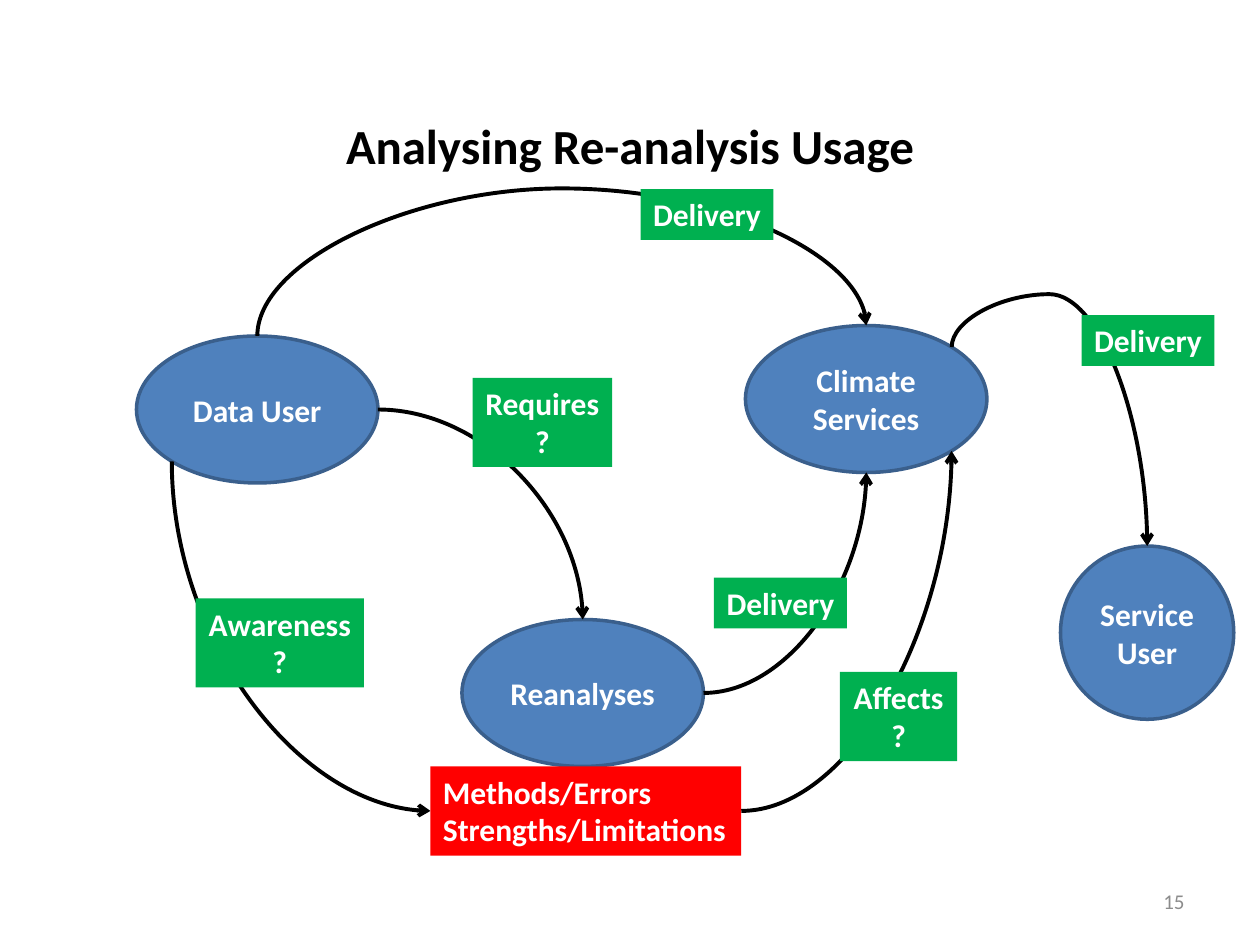
from typing import NamedTuple, Optional

from lxml import etree
from pptx import Presentation
from pptx.dml.color import RGBColor
from pptx.enum.shapes import MSO_CONNECTOR, MSO_SHAPE
from pptx.enum.text import MSO_ANCHOR, PP_ALIGN
from pptx.oxml.ns import qn
from pptx.util import Pt

CURVE = MSO_CONNECTOR.CURVE
OVAL, RECT = MSO_SHAPE.OVAL, MSO_SHAPE.RECTANGLE
MIDDLE, TOP = MSO_ANCHOR.MIDDLE, MSO_ANCHOR.TOP
LEFT, CENTER, RIGHT = PP_ALIGN.LEFT, PP_ALIGN.CENTER, PP_ALIGN.RIGHT

COLORS = {
    "blue": "4F81BD",
    "edge": "3A5F8C",
    "green": "00B050",
    "red": "FF0000",
    "black": "000000",
    "white": "FFFFFF",
    "gray": "8C8C8C",
}


class Node(NamedTuple):
    text: str
    x: float
    y: float
    w: float = 138
    h: float = 84


class Label(NamedTuple):
    text: str
    x: float
    y: float
    w: float = 76
    h: float = 29.1
    fill: str = "green"
    align: PP_ALIGN = CENTER


class Arrow(NamedTuple):
    x1: float
    y1: float
    x2: float
    y2: float
    upright: bool = False
    peak: Optional[float] = None


NODES = [
    Node("Reanalyses", 264, 354),
    Node("Climate Services", 426, 186),
    Node("Data User", 78, 192),
    Node("Service\nUser", 606, 312, 99, 99),
]

ARROWS = [
    Arrow(147, 192, 495, 186, upright=True, peak=107.8),
    Arrow(216, 234, 333, 354),
    Arrow(98.2, 263.7, 246, 463.4, upright=True),
    Arrow(402, 396, 495, 270),
    Arrow(543.8, 198.3, 655.5, 312, upright=True, peak=168),
    Arrow(423.6, 463.4, 543.8, 257.7),
]

LABELS = [
    Label("Methods/Errors\nStrengths/Limitations", 246, 438, 177.6, 50.9, "red", LEFT),
    Label("Requires\n?", 270, 216, 79.8, 50.9),
    Label("Awareness\n?", 111.8, 342, 96.2, 50.9),
    Label("Delivery", 366, 108),
    Label("Delivery", 618, 180),
    Label("Delivery", 408, 330),
    Label("Affects\n?", 480, 384, 67, 50.9),
]


def shade(name: str) -> RGBColor:
    return RGBColor.from_string(COLORS[name])


def put_text(shape, text: str, *, size=18, color="white", bold=True,
             align=CENTER, anchor=MIDDLE, wrap=True) -> None:
    frame = shape.text_frame
    frame.word_wrap = wrap
    frame.vertical_anchor = anchor
    frame.text = text
    for para in frame.paragraphs:
        para.alignment = align
        for run in para.runs:
            run.font.name = "Calibri"
            run.font.size = Pt(size)
            run.font.bold = bold
            run.font.color.rgb = shade(color)


def draw_box(slide, kind: MSO_SHAPE, item, fill: str):
    shape = slide.shapes.add_shape(kind, Pt(item.x), Pt(item.y), Pt(item.w), Pt(item.h))
    shape.shadow.inherit = False
    shape.fill.solid()
    shape.fill.fore_color.rgb = shade(fill)
    return shape


def draw_node(slide, node: Node) -> None:
    shape = draw_box(slide, OVAL, node, "blue")
    shape.line.color.rgb = shade("edge")
    shape.line.width = Pt(2)
    put_text(shape, node.text)


def draw_label(slide, label: Label) -> None:
    shape = draw_box(slide, RECT, label, label.fill)
    shape.line.fill.background()
    put_text(shape, label.text, align=label.align, anchor=TOP, wrap=False)


def draw_arrow(slide, arrow: Arrow) -> None:
    line = slide.shapes.add_connector(
        CURVE, Pt(arrow.x1), Pt(arrow.y1), Pt(arrow.x2), Pt(arrow.y2))
    line.line.color.rgb = shade("black")
    line.line.width = Pt(2.25)
    props = line._element.spPr
    tail = etree.SubElement(props.find(qn("a:ln")), qn("a:tailEnd"))
    tail.set("type", "arrow")
    etree.SubElement(props, qn("a:effectLst"))

    rise = arrow.y2 - arrow.y1
    if arrow.upright:
        wide, tall = abs(rise), arrow.x2 - arrow.x1
        line.left = Pt((arrow.x1 + arrow.x2 - wide) / 2)
        line.top = Pt((arrow.y1 + arrow.y2 - tall) / 2)
        line.width, line.height = Pt(wide), Pt(tall)
        turn = 270 if rise > 0 else 90
        form = props.find(qn("a:xfrm"))
        form.set("rot", str(turn * 60000))
        form.set("flipH", "1")
        form.set("flipV", "0" if rise > 0 else "1")

    shape = props.find(qn("a:prstGeom"))
    if arrow.peak is None:
        shape.set("prst", "curvedConnector2")
    else:
        bend = round((arrow.peak - arrow.y1) / rise * 100000)
        guides = shape.find(qn("a:avLst"))
        guide = etree.SubElement(guides, qn("a:gd"))
        guide.set("name", "adj1")
        guide.set("fmla", f"val {bend}")


def main() -> None:
    deck = Presentation()
    deck.slide_width, deck.slide_height = Pt(720), Pt(540)
    slide = deck.slides.add_slide(deck.slide_layouts[6])

    title = slide.shapes.add_textbox(Pt(36), Pt(66), Pt(648), Pt(34))
    put_text(title, "Analysing Re-analysis Usage", size=28, color="black")
    number = slide.shapes.add_textbox(Pt(516), Pt(500.5), Pt(168), Pt(28.75))
    put_text(number, "15", size=12, color="gray", bold=False, align=RIGHT)

    for node in NODES:
        draw_node(slide, node)
    for arrow in ARROWS:
        draw_arrow(slide, arrow)
    for label in LABELS:
        draw_label(slide, label)

    deck.save("out.pptx")


if __name__ == "__main__":
    main()
